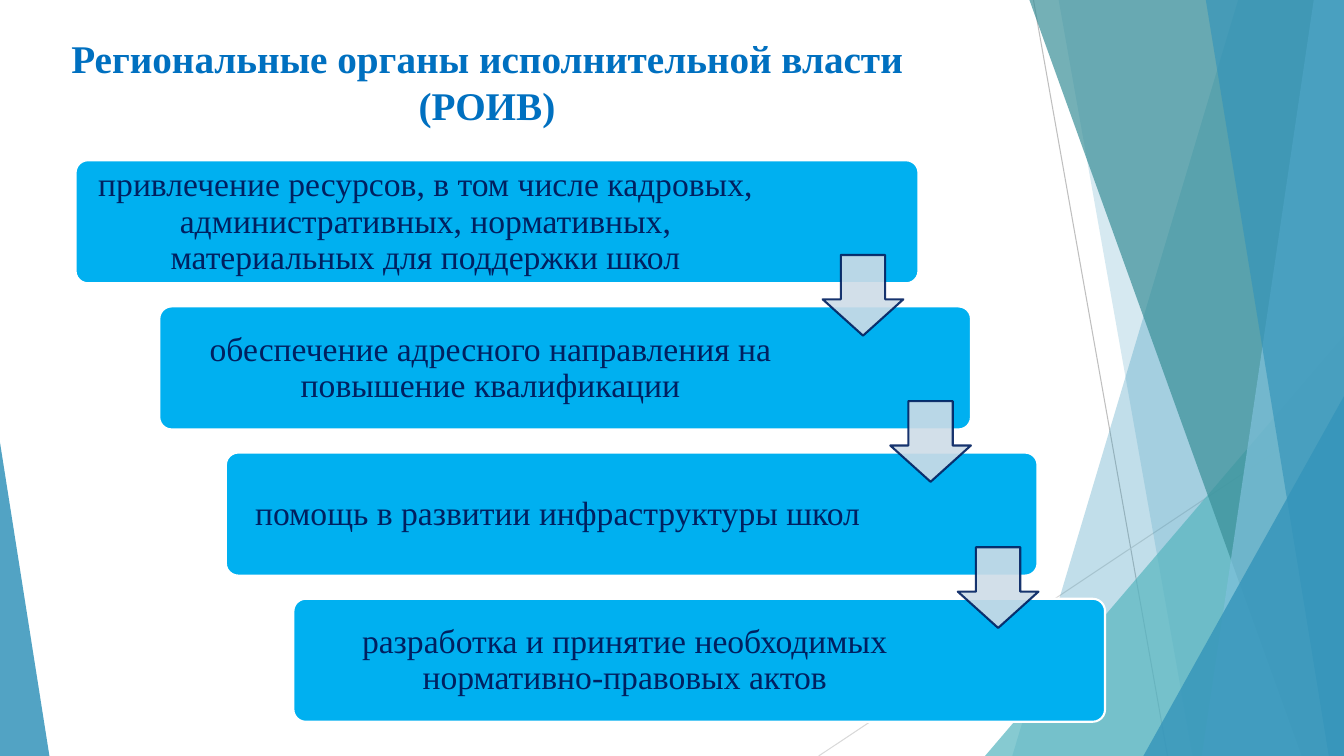
from pptx import Presentation
from pptx.dml.color import RGBColor
from pptx.enum.shapes import MSO_CONNECTOR, MSO_SHAPE as SHAPE
from pptx.enum.text import MSO_ANCHOR as ANCHOR, MSO_AUTO_SIZE, PP_ALIGN as ALIGN
from pptx.oxml.ns import qn
from pptx.oxml.xmlchemy import OxmlElement
from pptx.util import Inches, Pt

COLOURS = {
    "title": "0070C0", "step": "00B0F0", "text": "002060", "white": "FFFFFF",
    "arrow": "CEDCE7", "grey": "BFBFBF", "pale grey": "D9D9D9",
    "blue": "3494BA", "aqua": "58B6C0", "teal": "3A8F98", "sky": "7FC1DB",
}
FONT = "Times New Roman"


def paint(shape, fill, opacity=100, line=None):
    """Set fill and outline, both with the same opacity in percent."""
    shape.shadow.inherit = False
    shape.fill.solid()
    shape.fill.fore_color.rgb = RGBColor.from_string(COLOURS[fill])
    if line:
        shape.line.color.rgb = RGBColor.from_string(COLOURS[line])
        shape.line.width = Pt(1.5)
    else:
        shape.line.fill.background()
    if opacity < 100:
        for colour in shape._element.spPr.iter(qn("a:srgbClr")):
            alpha = OxmlElement("a:alpha")
            alpha.set("val", str(opacity * 1000))
            colour.append(alpha)


def write(para, text, size, colour, bold=False):
    para.alignment = ALIGN.CENTER
    span = para.add_run()
    span.text = text
    span.font.name = FONT
    span.font.size = Pt(size)
    span.font.bold = bold
    span.font.color.rgb = RGBColor.from_string(COLOURS[colour])


deck = Presentation()
deck.slide_width, deck.slide_height = Inches(13.33), Inches(7.5)
page = deck.slides.add_slide(deck.slide_layouts[5])
shapes = page.shapes

# Background lines
for x1, y1, x2, y2, colour in [
    (10.25, 0, 11.58, 7.5, "grey"),
    (13.33, 4.03, 8.12, 7.5, "pale grey"),
]:
    ray = shapes.add_connector(
        MSO_CONNECTOR.STRAIGHT, Inches(x1), Inches(y1), Inches(x2), Inches(y2))
    ray.line.color.rgb = RGBColor.from_string(COLOURS[colour])
    ray.line.width = Pt(0.75)
    ray._element.spPr.append(OxmlElement("a:effectLst"))

# Facets run from a slanted left edge (top x, bottom x) to the right page edge;
# triangles are given as left, top, width, height and apex position
for kind, geometry, colour, opacity in [
    ("facet", (12.28, 10.04), "blue", 30),
    ("facet", (10.5, 11.83), "blue", 20),
    ("triangle", (9.77, 3.33, 3.56, 4.17, 1), "aqua", 72),
    ("facet", (10.21, 12.91), "teal", 70),
    ("facet", (13.03, 11.92), "sky", 70),
    ("facet", (11.96, 13.18), "blue", 65),
    ("triangle", (11.34, 3.93, 1.99, 3.57, 1), "blue", 80),
    ("triangle", (0, 4.39, 0.49, 3.11, 0), "blue", 85),
]:
    if kind == "facet":
        top_x, bottom_x = map(Inches, geometry)
        outline = shapes.build_freeform(top_x, 0)
        outline.add_line_segments([
            (deck.slide_width, 0),
            (deck.slide_width, deck.slide_height),
            (bottom_x, deck.slide_height),
        ])
        piece = outline.convert_to_shape()
    else:
        *bounds, apex = geometry
        piece = shapes.add_shape(SHAPE.ISOSCELES_TRIANGLE, *map(Inches, bounds))
        piece.adjustments[0] = apex
    paint(piece, colour, opacity)

# Title
title = shapes.title
title.left, title.top = Inches(0.52), Inches(0.29)
title.width, title.height = Inches(8.62), Inches(1.04)
frame = title.text_frame
frame.word_wrap = True
frame.auto_size = MSO_AUTO_SIZE.NONE
frame.vertical_anchor = ANCHOR.TOP
write(frame.paragraphs[0], "Региональные органы исполнительной власти (РОИВ)",
      28, "title", bold=True)

# Staircase of steps
STEP_TOP, STEP_PITCH = 1.59, 1.45
steps = [
    (0.75, 8.36, 6.88, "привлечение ресурсов, в том числе кадровых, "
     "административных, нормативных, материальных для поддержки школ"),
    (1.58, 8.05, 6.51, "обеспечение адресного направления на повышение квалификации"),
    (2.24, 8.05, 6.52, "помощь в развитии инфраструктуры школ"),
    (2.91, 8.05, 6.51, "разработка и принятие необходимых нормативно-правовых актов"),
]
for index, (left, width, text_width, text) in enumerate(steps):
    top = STEP_TOP + index * STEP_PITCH
    step = shapes.add_shape(SHAPE.ROUNDED_RECTANGLE, Inches(left), Inches(top),
                            Inches(width), Inches(1.22))
    step.adjustments[0] = 0.1
    paint(step, "step", line="white")

    box = shapes.add_textbox(Inches(left + 0.03), Inches(top + 0.04),
                             Inches(text_width), Inches(1.15))
    frame = box.text_frame
    frame.word_wrap = True
    frame.vertical_anchor = ANCHOR.MIDDLE
    frame.margin_left = frame.margin_right = Inches(0.1)
    frame.margin_top = frame.margin_bottom = Inches(0.1)
    para = frame.paragraphs[0]
    para.line_spacing = 0.9
    write(para, text, 24, "text")

# Arrows from each step to the next
for index in range(len(steps) - 1):
    arrow = shapes.add_shape(
        SHAPE.DOWN_ARROW, Inches(8.16 + index * 0.67),
        Inches(STEP_TOP + 0.94 + index * STEP_PITCH), Inches(0.8), Inches(0.8))
    arrow.adjustments[0] = 0.45
    arrow.adjustments[1] = 0.45
    arrow.adjustments[0] = 0.55
    paint(arrow, "arrow", 90, line="text")

deck.save("out.pptx")
